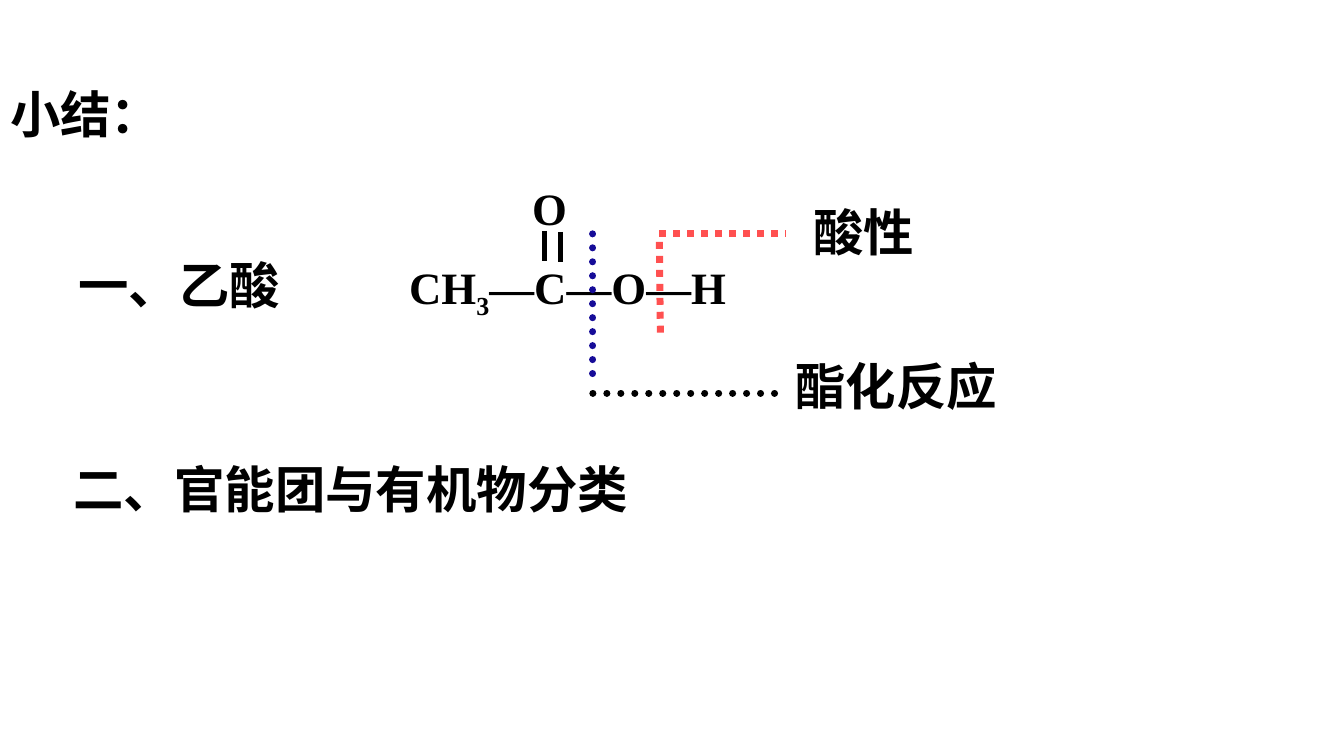
from lxml.etree import SubElement
from pptx import Presentation
from pptx.dml.color import RGBColor
from pptx.enum.dml import MSO_LINE
from pptx.enum.shapes import MSO_CONNECTOR
from pptx.enum.text import MSO_ANCHOR, PP_ALIGN
from pptx.oxml.ns import qn
from pptx.util import Inches, Pt

COLORS = {"text": "000000", "acid": "FF5050", "ester": "160C98"}
CJK, LATIN = "Noto Sans CJK SC", "Times New Roman"


class SlideBuilder:
    def __init__(self, prs):
        self.slide = prs.slides.add_slide(prs.slide_layouts[5])

    def run(self, p, text, size=36, font=CJK, baseline=None):
        r = p.add_run()
        r.text = text
        r.font.size, r.font.name, r.font.bold = Pt(size), font, True
        r.font.color.rgb = RGBColor.from_string(COLORS["text"])
        SubElement(r.font._element, qn("a:ea")).set("typeface", CJK)
        if baseline is not None:
            r.font._element.set("baseline", str(baseline))

    def title(self, text, left, top, width, height):
        sp = self.slide.shapes.title
        sp.left, sp.top, sp.width, sp.height = map(Inches, (left, top, width, height))
        tf = sp.text_frame
        tf.vertical_anchor = MSO_ANCHOR.TOP
        p = tf.paragraphs[0]
        p.alignment = PP_ALIGN.LEFT
        self.run(p, text)

    def box(self, left, top, width, height):
        sp = self.slide.shapes.add_textbox(*map(Inches, (left, top, width, height)))
        sp.text_frame.word_wrap = True
        return sp.text_frame

    def label(self, text, left, top, width, font=CJK):
        self.run(self.box(left, top, width, 0.71).paragraphs[0], text, font=font)

    def formula(self, left, top, width, height):
        """Acetic acid, with the carbonyl oxygen indented to sit above its carbon."""
        tf = self.box(left, top, width, height)
        p = tf.paragraphs[0]
        p._p.get_or_add_pPr().set("marL", str(Inches(1.22)))
        self.run(p, "O", 32, LATIN)
        p = tf.add_paragraph()
        p.space_before = Pt(18)
        for text, baseline in (("CH", None), ("3", -25000), ("—C—O—H", None)):
            self.run(p, text, 32, LATIN, baseline)

    def line(self, x1, y1, x2, y2, color="text", width=5, dotted=True, rounded=False):
        s = self.slide.shapes.add_connector(
            MSO_CONNECTOR.STRAIGHT, *map(Inches, (x1, y1, x2, y2)))
        s.line.color.rgb = RGBColor.from_string(COLORS[color])
        s.line.width = Pt(width)
        if dotted:
            s.line.dash_style = MSO_LINE.ROUND_DOT
        if rounded:
            s.line._get_or_add_ln().set("cap", "rnd")
        SubElement(s._element.spPr, qn("a:effectLst"))


def main():
    prs = Presentation()
    prs.slide_width, prs.slide_height = Inches(13.33), Inches(7.5)
    s = SlideBuilder(prs)

    s.title("小结：", 0, 0.77, 4.66, 0.71)
    s.formula(3.96, 1.74, 3.44, 1.43)
    for x, y in ((5.4, 2.29), (5.56, 2.3)):
        s.line(x, y, x, y + 0.3, width=3, dotted=False)

    s.line(6.54, 2.4, 6.55, 3.36, "acid")
    s.line(6.54, 2.32, 7.79, 2.32, "acid")
    s.line(5.88, 2.32, 5.88, 3.82, "ester", rounded=True)
    s.line(5.88, 3.9, 7.79, 3.9, rounded=True)

    s.label("酸性", 7.97, 1.95, 1.34, LATIN)
    s.label("酯化反应", 7.79, 3.47, 3.65, LATIN)
    s.label("二、官能团与有机物分类", 0.63, 4.5, 5.9)
    s.label("一、乙酸", 0.68, 2.47, 2.8)
    prs.save("out.pptx")


if __name__ == "__main__":
    main()
